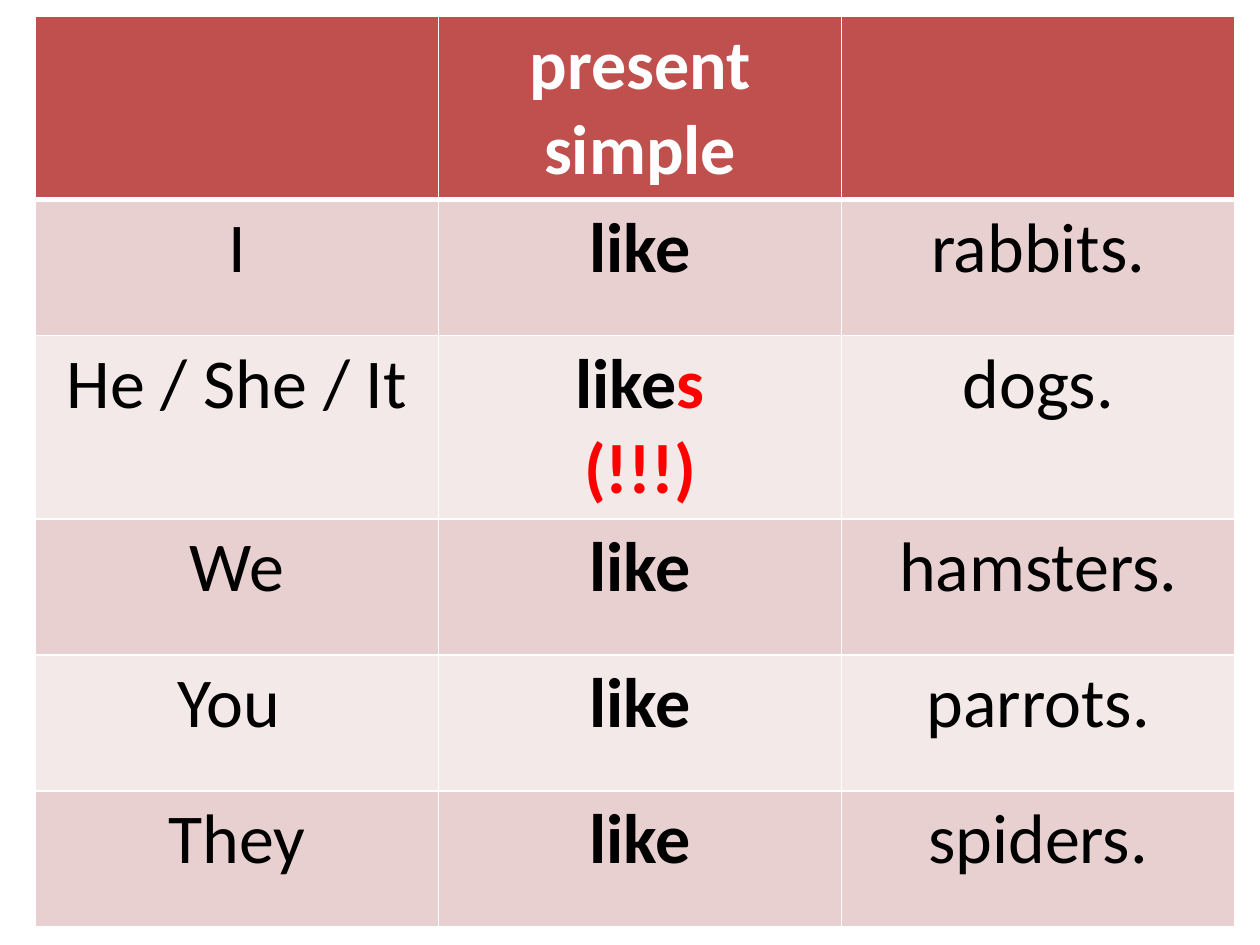
from lxml import etree
from pptx import Presentation
from pptx.dml.color import RGBColor
from pptx.enum import text
from pptx.oxml import ns
from pptx.util import Inches, Pt

WHITE, BLACK, RED = "FFFFFF", "000000", "FF0000"
HEADER, BAND_DARK, BAND_LIGHT = "C0504D", "E8D0D0", "F4E9E9"


def colour(value):
    return RGBColor.from_string(value)


def set_borders(cell, widths):
    """Draw white cell borders; widths are points for left, right, top, bottom."""
    properties = cell._tc.get_or_add_tcPr()
    for index, (side, width) in enumerate(zip("LRTB", widths)):
        line = etree.Element(ns.qn(f"a:ln{side}"), w=str(Pt(width)))
        fill = etree.SubElement(line, ns.qn("a:solidFill"))
        etree.SubElement(fill, ns.qn("a:srgbClr"), val=WHITE)
        properties.insert(index, line)


class Slide:
    def __init__(self, page, font="Calibri", size=40):
        self.page, self.font, self.size = page, font, size

    def cell_text(self, cell, lines, bold, default):
        """Fill a cell with lines, each a list of (wording, colour or None)."""
        frame = cell.text_frame
        for number, line in enumerate(lines):
            para = frame.add_paragraph() if number else frame.paragraphs[0]
            para.alignment = text.PP_ALIGN.CENTER
            for wording, tint in line:
                span = para.add_run()
                span.text = wording
                span.font.name = self.font
                span.font.size = Pt(self.size)
                span.font.bold = bold
                span.font.color.rgb = colour(tint or default)

    def table(self, left, top, widths, row_height, rows):
        frame = self.page.shapes.add_table(
            len(rows), len(widths), Inches(left), Inches(top),
            Inches(sum(widths)), Inches(row_height * len(rows)))
        grid = frame.table
        for column, width in zip(grid.columns, widths):
            column.width = Inches(width)
        for r, row in enumerate(rows):
            grid.rows[r].height = Inches(row_height)
            band = HEADER if r == 0 else BAND_DARK if r % 2 else BAND_LIGHT
            for c, content in enumerate(row):
                cell = grid.cell(r, c)
                cell.fill.solid()
                cell.fill.fore_color.rgb = colour(band)
                set_borders(cell, (1, 1, 3 if r == 1 else 1, 3 if r == 0 else 1))
                lines = [[(content, None)]] if isinstance(content, str) else content
                if content:
                    self.cell_text(cell, lines, r == 0 or c == 1, BLACK if r else WHITE)


def main():
    deck = Presentation()
    deck.slide_width, deck.slide_height = Inches(10), Inches(7.5)
    slide = Slide(deck.slides.add_slide(deck.slide_layouts[6]))
    third_person = [[("like", None), ("s", RED)], [("(!!!)", RED)]]
    slide.table(0.28, 0.13, (3.2, 3.2, 3.12), 1.08, [
        ("", "present simple", ""),
        ("I", "like", "rabbits."),
        ("He / She / It", third_person, "dogs."),
        ("We", "like", "hamsters."),
        ("You ", "like", "parrots."),
        ("They", "like", "spiders."),
    ])
    deck.save("out.pptx")


if __name__ == "__main__":
    main()
